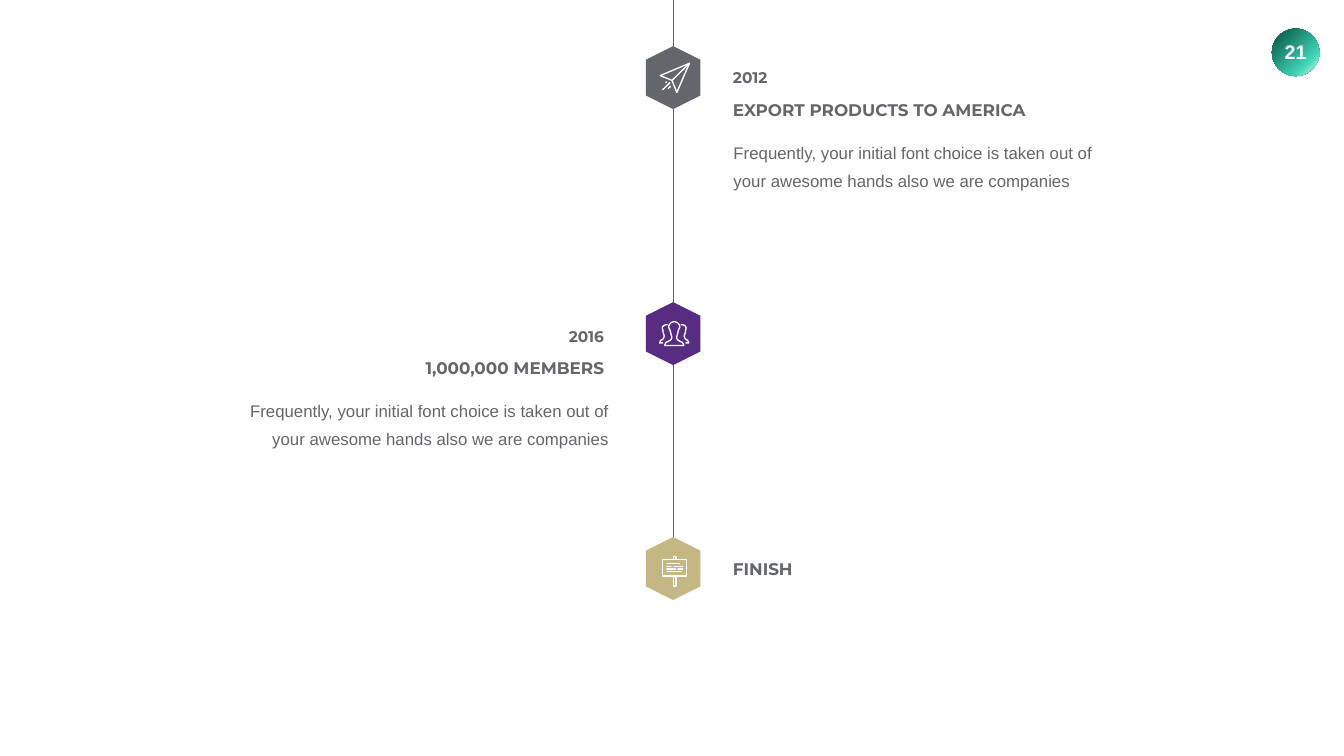
from dataclasses import dataclass

from lxml import etree
from pptx import Presentation
from pptx.dml.color import RGBColor
from pptx.enum import shapes, text
from pptx.oxml import ns
from pptx.util import Pt

Point = tuple[float, float]

COLORS = {"gray": "63666A", "purple": "582C83", "sand": "C5B783", "white": "FFFFFF"}
BADGE_STOPS = [(0, "024C3C"), (74, "42D6B8"), (83, "7FE3C8"), (100, "28CCAC")]

AXIS_X = 961.4
HEX_LONG, HEX_SHORT = 90, 77.8
HEADING_STEP, BODY_STEP = 44, 89.3
RIGHT_EDGE, LEFT_EDGE = 1039.7, 869.8
BODY_WIDTH, BODY_SHIFT = 558.7, 9.4
ICON_UNIT = 0.72
BODY_TEXT = ("Frequently, your initial font choice is taken out of "
             "your awesome hands also we are companies")


@dataclass
class Stroke:
    points: list[Point]
    closed: bool = False


@dataclass
class Icon:
    left: float
    top: float
    strokes: list[Stroke]


@dataclass
class Milestone:
    center_y: float
    color: str
    icon: Icon
    text_top: float
    heading: str
    heading_width: float
    year: str = ""
    body: str = ""
    on_left: bool = False


def rgb(name: str) -> RGBColor:
    return RGBColor.from_string(COLORS[name])


def smooth(points: list[Point], steps: int = 5) -> list[Point]:
    """Run a Catmull-Rom curve through the points."""
    padded = [points[0], *points, points[-1]]
    curve = [points[0]]
    for a, b, c, d in zip(padded, padded[1:], padded[2:], padded[3:]):
        for step in range(1, steps + 1):
            t = step / steps
            curve.append(tuple(
                (2 * q + (r - p) * t + (2 * p - 5 * q + 4 * r - s) * t ** 2
                 + (3 * q - p - 3 * r + s) * t ** 3) / 2
                for p, q, r, s in zip(a, b, c, d)))
    return curve


def mirror(points: list[Point], axis: float = 30.5) -> list[Point]:
    return [(2 * axis - x, y) for x, y in points]


def add_text(page, left: float, top: float, width: float, height: float, words: str,
             size: float, font: str, color: str = "gray", bold: bool = False,
             align=text.PP_ALIGN.LEFT, wrap: bool = False,
             anchor=text.MSO_ANCHOR.MIDDLE, inset: Point = (7.2, 3.6)):
    box = page.shapes.add_textbox(Pt(left), Pt(top), Pt(width), Pt(height))
    frame = box.text_frame
    frame.word_wrap = wrap
    frame.auto_size = text.MSO_AUTO_SIZE.SHAPE_TO_FIT_TEXT
    frame.vertical_anchor = anchor
    frame.margin_left = frame.margin_right = Pt(inset[0])
    frame.margin_top = frame.margin_bottom = Pt(inset[1])
    para = frame.paragraphs[0]
    para.alignment = align
    span = para.add_run()
    span.text = words
    span.font.size, span.font.name, span.font.bold = Pt(size), font, bold
    span.font.color.rgb = rgb(color)
    return para


def add_icon(page, icon: Icon) -> None:
    def place(point: Point) -> Point:
        return (Pt(icon.left + point[0] * ICON_UNIT), Pt(icon.top + point[1] * ICON_UNIT))

    builder = page.shapes.build_freeform(*place(icon.strokes[0].points[0]))
    for index, stroke in enumerate(icon.strokes):
        first, *rest = map(place, stroke.points)
        if index:
            builder.move_to(*first)
        builder.add_line_segments(rest, close=stroke.closed)
    drawing = builder.convert_to_shape()
    drawing.shadow.inherit = False
    drawing.fill.background()
    drawing.line.color.rgb = rgb("white")
    drawing.line.width = Pt(1.9)
    outline = drawing.line._get_or_add_ln()
    outline.set("cap", "rnd")
    etree.SubElement(outline, ns.qn("a:round"))


def add_milestone(page, item: Milestone) -> None:
    hexagon = page.shapes.add_shape(
        shapes.MSO_SHAPE.HEXAGON, Pt(AXIS_X - HEX_LONG / 2),
        Pt(item.center_y - HEX_SHORT / 2), Pt(HEX_LONG), Pt(HEX_SHORT))
    hexagon.rotation = 90
    hexagon.shadow.inherit = False
    hexagon.fill.solid()
    hexagon.fill.fore_color.rgb = rgb(item.color)
    hexagon.line.fill.background()
    add_icon(page, item.icon)

    align = text.PP_ALIGN.RIGHT if item.on_left else text.PP_ALIGN.LEFT

    def left_for(width: float) -> float:
        return LEFT_EDGE - width if item.on_left else RIGHT_EDGE

    if item.year:
        add_text(page, left_for(73.4), item.text_top, 73.4, 33.8, item.year, 22,
                 "Montserrat", bold=True, align=align)
    add_text(page, left_for(item.heading_width), item.text_top + HEADING_STEP,
             item.heading_width, 36, item.heading, 24, "Montserrat", bold=True, align=align)
    if item.body:
        shift = 16.5 if item.on_left else -BODY_SHIFT
        para = add_text(page, left_for(BODY_WIDTH) + shift, item.text_top + BODY_STEP,
                        BODY_WIDTH, 93.6, item.body, 24, "Arial", align=align, wrap=True,
                        anchor=text.MSO_ANCHOR.TOP, inset=(17.3, 8.6))
        para.line_spacing = Pt(40.4)


def add_badge(page, number: str) -> None:
    badge = page.shapes.add_shape(
        shapes.MSO_SHAPE.OVAL, Pt(1816.6), Pt(41), Pt(67.7), Pt(67.7))
    badge.shadow.inherit = False
    badge.line.fill.background()
    badge.fill.gradient()
    gradient = badge._element.spPr.find(ns.qn("a:gradFill"))
    stops = gradient.find(ns.qn("a:gsLst"))
    for stop in list(stops):
        stops.remove(stop)
    for position, color in BADGE_STOPS:
        stop = etree.SubElement(stops, ns.qn("a:gs"), pos=str(position * 1000))
        etree.SubElement(stop, ns.qn("a:srgbClr"), val=color)
    gradient.find(ns.qn("a:lin")).set("ang", str(45 * 60000))
    add_text(page, 1818.7, 49.7, 63.4, 48.2, number, 28, "Arial", "white", True,
             text.PP_ALIGN.CENTER, anchor=text.MSO_ANCHOR.TOP, inset=(14.4, 7.2))


def add_axis(page, bottom: float) -> None:
    axis = page.shapes.add_connector(
        shapes.MSO_CONNECTOR.STRAIGHT, Pt(AXIS_X), Pt(0), Pt(AXIS_X), Pt(bottom))
    axis.line.color.rgb = rgb("gray")
    axis.line.width = Pt(0.5)
    etree.SubElement(axis._element.spPr, ns.qn("a:effectLst"))


# Icon strokes, in hundredths of an inch from the icon's corner
PLANE = Icon(941.8, 89.3, [
    Stroke([(59.5, 1.5), (1.5, 26), (25, 35.5), (34.5, 59.5)], True),
    Stroke([(25, 35.5), (59.5, 1.5)]),
    *[Stroke(list(ends)) for ends in (((22, 47.5), (17.5, 51.5)),
                                      ((21, 40), (6.5, 54)), ((14, 38.5), (12.5, 40)))]])

HALF_PERSON = [(11.5, 48.5), (14, 43), (19.5, 40), (24, 37), (25.5, 32), (23.5, 24),
               (22, 18), (19.5, 12), (21, 7), (25, 3), (30.5, 1.5)]
SIDE_PERSON = smooth([(16.5, 7.5), (14, 7.5), (10, 9), (7, 13), (8, 19), (8.5, 23),
                      (10.5, 30), (8, 36), (4, 38.5), (1.5, 43.5)]) + [(7.5, 43.5)]
MEMBERS = Icon(941, 458.6, [
    Stroke(smooth(HALF_PERSON + mirror(HALF_PERSON)[-2::-1]), True),
    Stroke(SIDE_PERSON), Stroke(mirror(SIDE_PERSON))])

SIGN_ROWS = [(15, 10, 35), (20.5, 10, 18), (20.5, 24, 41),
             (26, 10, 27), (26, 32, 41), (31.5, 10, 38)]
SIGN = Icon(945.4, 794.2, [
    Stroke([(1.5, 6.5), (48.5, 6.5), (48.5, 39.5), (1.5, 39.5)], True),
    *[Stroke([(22.5, near), (22.5, far), (28, far), (28, near)])
      for near, far in ((6.5, 1.5), (39.5, 59.5))],
    *[Stroke([(start, y), (end, y)]) for y, start, end in SIGN_ROWS]])

MILESTONES = [
    Milestone(110.9, "gray", PLANE, 94.3, "EXPORT PRODUCTS TO AMERICA", 460, "2012", BODY_TEXT),
    Milestone(476.6, "purple", MEMBERS, 463, "1,000,000 MEMBERS", 288, "2016", BODY_TEXT, True),
    Milestone(812.2, "sand", SIGN, 750.2, "FINISH", 107.3),
]


def main() -> None:
    deck = Presentation()
    deck.slide_width, deck.slide_height = Pt(1919.5), Pt(1080)
    page = deck.slides.add_slide(deck.slide_layouts[6])
    add_badge(page, "21")
    add_axis(page, MILESTONES[-1].center_y)
    for item in MILESTONES:
        add_milestone(page, item)
    deck.save("out.pptx")


if __name__ == "__main__":
    main()
